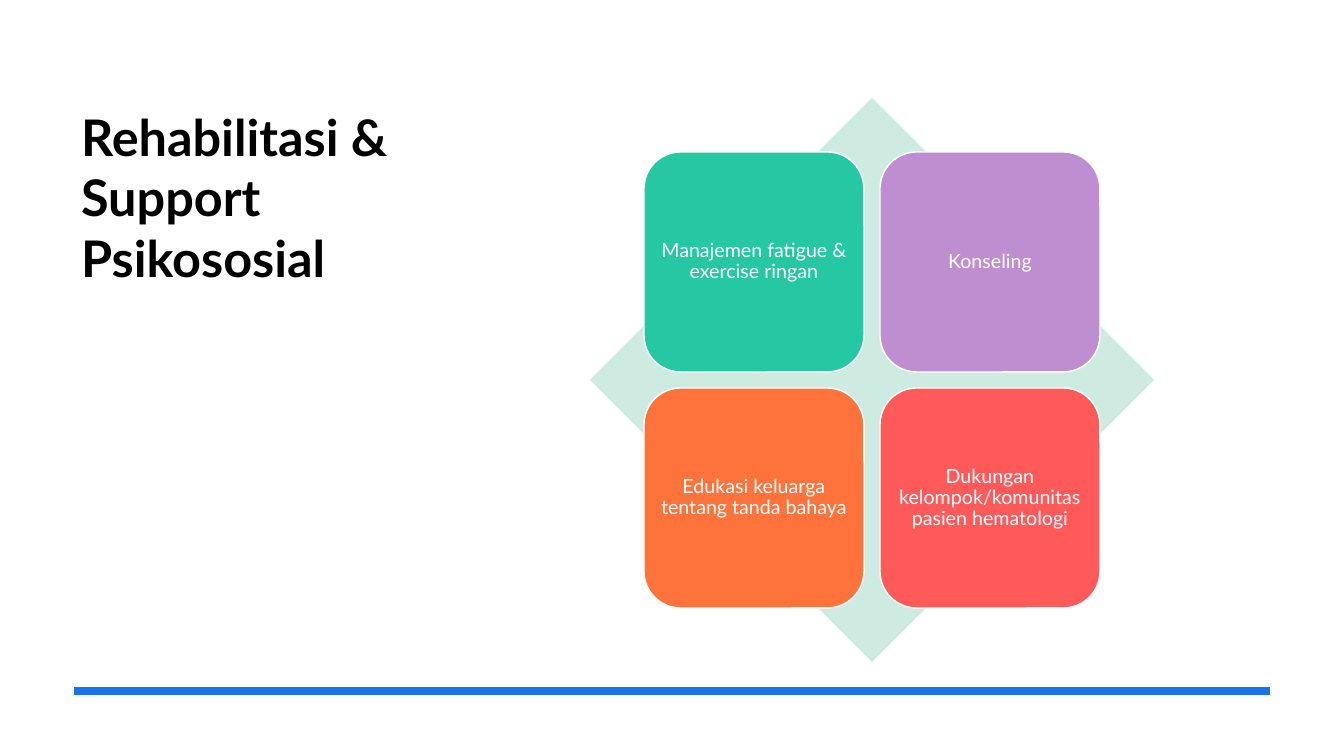
from pptx import Presentation
from pptx.dml.color import RGBColor
from pptx.enum.shapes import MSO_CONNECTOR, MSO_SHAPE
from pptx.enum.text import MSO_ANCHOR, MSO_AUTO_SIZE, PP_ALIGN
from pptx.util import Emu, Pt
from lxml import etree

BLACK = RGBColor(0x00, 0x00, 0x00)
WHITE = RGBColor(0xFF, 0xFF, 0xFF)
BLUE = RGBColor(0x19, 0x73, 0xEB)
MINT = RGBColor(0xCD, 0xEB, 0xE0)
GREEN = RGBColor(0x25, 0xC8, 0xA2)
PURPLE = RGBColor(0xBF, 0x8E, 0xD1)
ORANGE = RGBColor(0xFE, 0x73, 0x3C)
RED = RGBColor(0xFE, 0x5A, 0x5A)
FONT = "Lato"
DRAWING_NS = "http://schemas.openxmlformats.org/drawingml/2006/main"


def px(length):
    return Emu(round(length * 12192000 / 1344))


def style_text(paragraph, size, color, bold=False):
    for run in paragraph.runs:
        run.font.name = FONT
        run.font.size = Pt(size)
        run.font.bold = bold
        run.font.color.rgb = color


prs = Presentation()
prs.slide_width = px(1344)
prs.slide_height = px(756)
slide = prs.slides.add_slide(prs.slide_layouts[5])

heading = slide.shapes.title
heading.left, heading.top, heading.width, heading.height = px(71), px(101), px(331), px(459)
heading_frame = heading.text_frame
heading_frame.text = "Rehabilitasi & Support Psikososial"
heading_frame.word_wrap = True
heading_frame.auto_size = MSO_AUTO_SIZE.NONE
heading_frame.vertical_anchor = MSO_ANCHOR.TOP
heading_frame.paragraphs[0].alignment = PP_ALIGN.LEFT
style_text(heading_frame.paragraphs[0], 36, BLACK, bold=True)

footer_rule = slide.shapes.add_connector(
    MSO_CONNECTOR.STRAIGHT, px(74), px(691), px(1270), px(691))
footer_rule.line.color.rgb = BLUE
footer_rule.line.width = Pt(6)
etree.SubElement(footer_rule._element.spPr, f"{{{DRAWING_NS}}}effectLst")

matrix = slide.shapes.add_group_shape()
backdrop = matrix.shapes.add_shape(
    MSO_SHAPE.DIAMOND, px(590), px(98), px(564), px(564))
backdrop.shadow.inherit = False
backdrop.fill.solid()
backdrop.fill.fore_color.rgb = MINT
backdrop.line.fill.background()

supports = [
    ("Manajemen fatigue & exercise ringan", GREEN),
    ("Konseling", PURPLE),
    ("Edukasi keluarga tentang tanda bahaya", ORANGE),
    ("Dukungan kelompok/komunitas pasien hematologi", RED),
]
CARD_SIZE, CARD_PITCH = 220, 236
for index, (label, color) in enumerate(supports):
    row, column = divmod(index, 2)
    card = matrix.shapes.add_shape(
        MSO_SHAPE.ROUNDED_RECTANGLE,
        px(644 + column * CARD_PITCH), px(152 + row * CARD_PITCH),
        px(CARD_SIZE), px(CARD_SIZE))
    card.shadow.inherit = False
    card.fill.solid()
    card.fill.fore_color.rgb = color
    card.line.color.rgb = WHITE
    card.line.width = Pt(1)

    card_frame = card.text_frame
    card_frame.text = label
    card_frame.word_wrap = True
    card_frame.vertical_anchor = MSO_ANCHOR.MIDDLE
    card_frame.margin_left = card_frame.margin_right = px(5)
    card_frame.margin_top = card_frame.margin_bottom = px(5)
    paragraph = card_frame.paragraphs[0]
    paragraph.alignment = PP_ALIGN.CENTER
    paragraph.line_spacing = 0.9
    style_text(paragraph, 14, WHITE)

prs.save("out.pptx")
